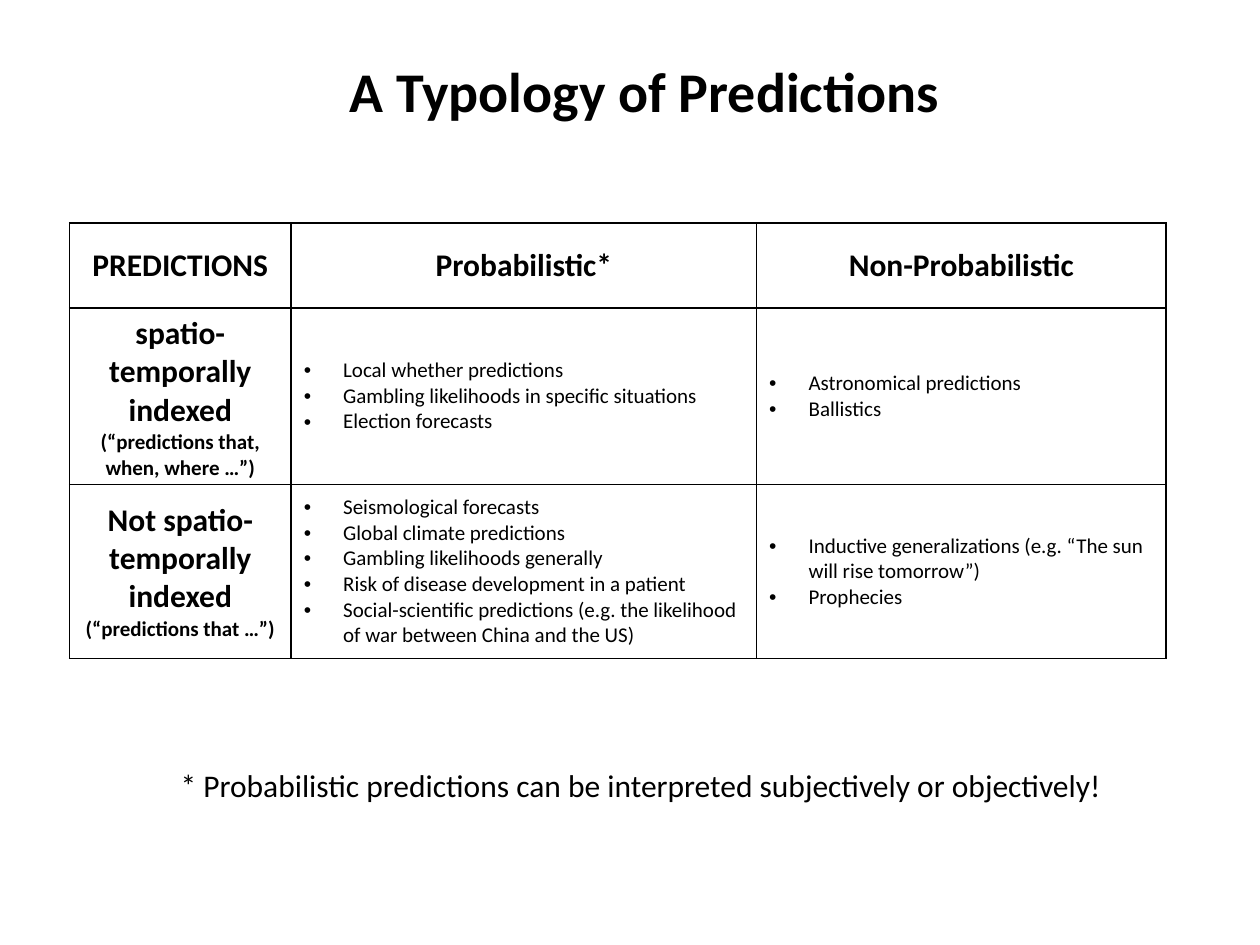
from dataclasses import dataclass

from lxml.etree import SubElement
from pptx import Presentation
from pptx.dml.color import RGBColor
from pptx.enum.text import MSO_ANCHOR, MSO_AUTO_SIZE, PP_ALIGN
from pptx.oxml import parse_xml
from pptx.oxml.ns import nsdecls, qn
from pptx.util import Pt


@dataclass(frozen=True)
class Theme:
    font: str = "Calibri"
    ink: str = "000000"
    title: int = 32
    heading: int = 18
    detail: int = 12
    rule: int = 1
    hanging: float = 22.5


class TypologySlide:
    """Hold the theme and the slide, and draw its text and table."""

    def __init__(self, presentation, theme):
        self.theme = theme
        self.slide = presentation.slides.add_slide(presentation.slide_layouts[6])

    def style(self, paragraph, size, bold=False, align=PP_ALIGN.CENTER):
        paragraph.alignment = align
        for run in paragraph.runs:
            run.font.name = self.theme.font
            run.font.size = Pt(size)
            run.font.bold = bold
            run.font.color.rgb = RGBColor.from_string(self.theme.ink)

    def text(self, wording, left, top, width, height, size, bold=False):
        frame = self.slide.shapes.add_textbox(
            Pt(left), Pt(top), Pt(width), Pt(height)).text_frame
        frame.word_wrap = False
        frame.auto_size = MSO_AUTO_SIZE.SHAPE_TO_FIT_TEXT
        frame.text = wording
        self.style(frame.paragraphs[0], size, bold)

    def bullet(self, paragraph):
        properties = paragraph._p.get_or_add_pPr()
        properties.set("marL", str(Pt(self.theme.hanging)))
        properties.set("indent", str(-Pt(self.theme.hanging)))
        SubElement(properties, qn("a:buFont"), typeface="Arial")
        SubElement(properties, qn("a:buChar"), char="•")

    def border(self, cell):
        properties = cell._tc.get_or_add_tcPr()
        for index, side in enumerate("LRTB"):
            properties.insert(index, parse_xml(
                f'<a:ln{side} {nsdecls("a")} w="{Pt(self.theme.rule)}"><a:solidFill>'
                f'<a:srgbClr val="{self.theme.ink}"/></a:solidFill></a:ln{side}>'))

    def cell(self, cell, lines, is_heading):
        cell.fill.background()
        self.border(cell)
        cell.vertical_anchor = MSO_ANCHOR.MIDDLE
        cell.text_frame.text = "\n".join(lines)
        for index, paragraph in enumerate(cell.text_frame.paragraphs):
            if is_heading:
                size = self.theme.detail if index else self.theme.heading
                self.style(paragraph, size, bold=True)
            else:
                self.style(paragraph, self.theme.detail, align=PP_ALIGN.LEFT)
                self.bullet(paragraph)

    def table(self, rows, left, top, widths, heights):
        table = self.slide.shapes.add_table(
            len(heights), len(widths), Pt(left), Pt(top),
            Pt(sum(widths)), Pt(sum(heights))).table
        table.first_row = table.horz_banding = False
        for column, width in zip(table.columns, widths):
            column.width = Pt(width)
        for row, height in zip(table.rows, heights):
            row.height = Pt(height)
        for r, row in enumerate(rows):
            for c, lines in enumerate(row):
                self.cell(table.cell(r, c), lines, is_heading=r == 0 or c == 0)


PREDICTIONS = [
    [["PREDICTIONS"], ["Probabilistic*"], ["Non-Probabilistic"]],
    [
        ["spatio-temporally indexed", "(“predictions that, when, where …”)"],
        ["Local whether predictions",
         "Gambling likelihoods in specific situations",
         "Election forecasts"],
        ["Astronomical predictions", "Ballistics"],
    ],
    [
        ["Not spatio-temporally indexed", "(“predictions that …”)"],
        ["Seismological forecasts",
         "Global climate predictions",
         "Gambling likelihoods generally",
         "Risk of disease development in a patient",
         "Social-scientific predictions (e.g. the likelihood of war "
         "between China and the US)"],
        ["Inductive generalizations (e.g. “The sun will rise tomorrow”)",
         "Prophecies"],
    ],
]


def main():
    presentation = Presentation()
    presentation.slide_width, presentation.slide_height = Pt(720), Pt(540)
    theme = Theme()
    typology = TypologySlide(presentation, theme)
    typology.text("A Typology of Predictions", 190.8, 29, 355, 46,
                  theme.title, bold=True)
    typology.table(PREDICTIONS, 39.7, 127.5, [126.7, 266, 234], [48.5, 99.5, 99.5])
    typology.text("* Probabilistic predictions can be interpreted "
                  "subjectively or objectively! ", 85, 434.2, 566.6, 29,
                  theme.heading)
    presentation.save("out.pptx")


if __name__ == "__main__":
    main()
